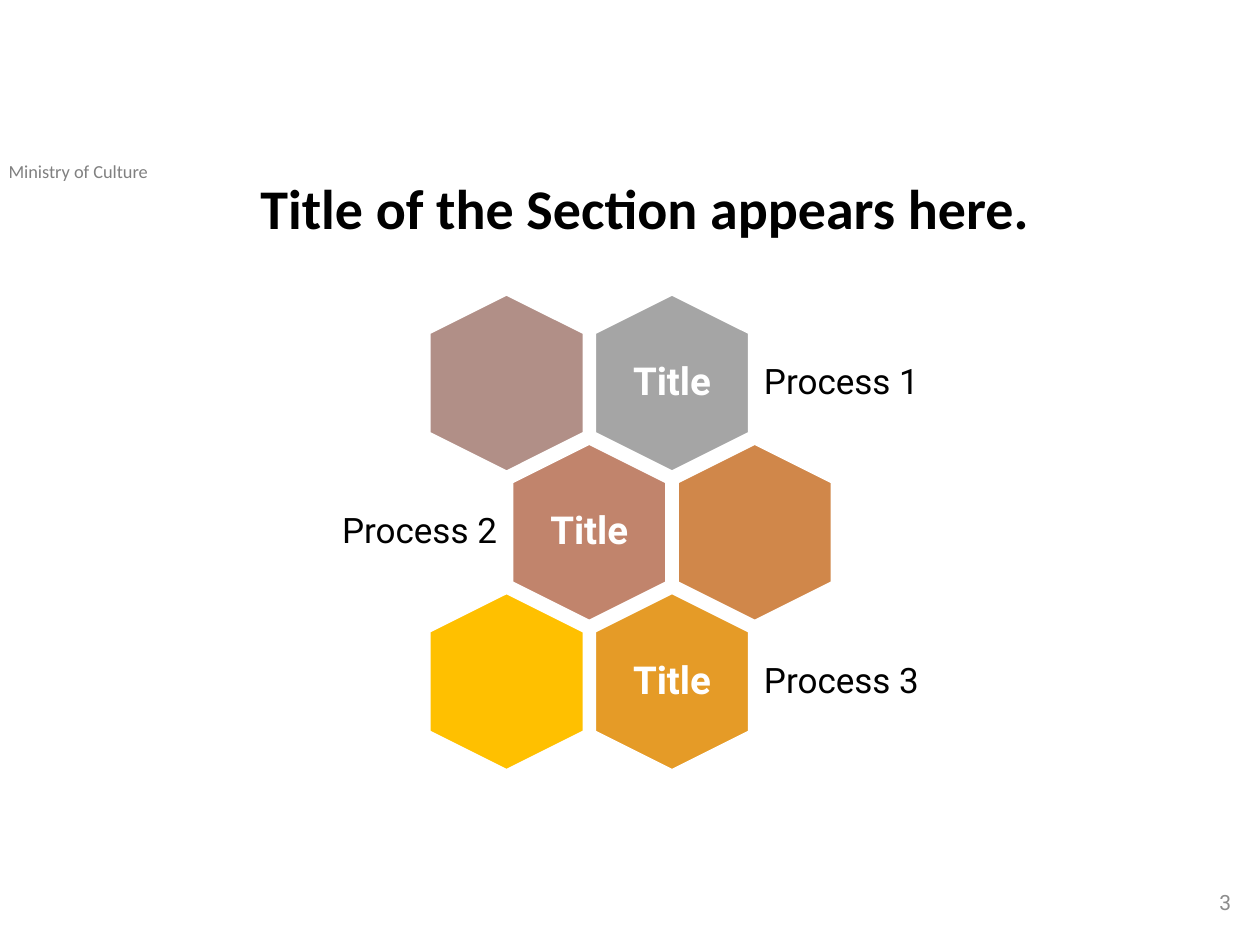
from dataclasses import dataclass

from pptx import Presentation
from pptx.dml.color import RGBColor
from pptx.enum.shapes import MSO_SHAPE
from pptx.enum.text import MSO_ANCHOR, PP_ALIGN
from pptx.util import Inches, Pt


@dataclass(frozen=True)
class Theme:
    heading: str = "Calibri"
    body: str = "Roboto"
    black: str = "000000"
    white: str = "FFFFFF"
    header_gray: str = "808080"
    number_gray: str = "8C8C8C"
    header_size: float = 10.5
    number_size: float = 12
    process_size: float = 20
    cell_size: float = 22
    title_size: float = 32


@dataclass(frozen=True)
class Box:
    left: float
    top: float
    width: float
    height: float

    def inches(self):
        return [Inches(v) for v in (self.left, self.top, self.width, self.height)]


THEME = Theme()
CELL_WIDTH, CELL_HEIGHT = 1.22, 1.4
LABEL_WIDTH, LABEL_HEIGHT, LABEL_GAP = 1.56, 0.84, 0.04
ROWS = [
    [("B18F87", "", ""), ("A5A5A5", "Title", "Process 1")],
    [("C1846C", "Title", "Process 2"), ("D0874A", "", "")],
    [("FFC000", "", ""), ("E59B27", "Title", "Process 3")],
]


def write(shape, text, font, size, color, align=PP_ALIGN.LEFT, bold=False,
          anchor=MSO_ANCHOR.MIDDLE, spacing=0.9, inset=None):
    frame = shape.text_frame
    frame.word_wrap = True
    frame.vertical_anchor = anchor
    if inset is not None:
        frame.margin_left = frame.margin_right = Inches(inset)
        frame.margin_top = frame.margin_bottom = Inches(inset)
    para = frame.paragraphs[0]
    para.text = text
    para.alignment = align
    para.line_spacing = spacing
    para.font.name = font
    para.font.size = Pt(size)
    para.font.bold = bold
    para.font.color.rgb = RGBColor.from_string(color)


def add_header(page, box):
    write(page.shapes.add_textbox(*box.inches()), "Ministry of Culture",
          THEME.heading, THEME.header_size, THEME.header_gray,
          anchor=MSO_ANCHOR.TOP, spacing=1.0)


def add_title(page, box):
    title = page.shapes.title
    title.left, title.top, title.width, title.height = box.inches()
    write(title, "Title of the Section appears here.", THEME.heading,
          THEME.title_size, THEME.black, PP_ALIGN.CENTER, True, MSO_ANCHOR.TOP)


def add_page_number(page, box):
    write(page.shapes.add_textbox(*box.inches()), "3", THEME.body,
          THEME.number_size, THEME.number_gray, PP_ALIGN.RIGHT, spacing=1.0)


def add_cell(page, box, color, caption):
    shift = (box.height - box.width) / 2
    turned = Box(box.left - shift, box.top + shift, box.height, box.width)
    hexagon = page.shapes.add_shape(MSO_SHAPE.HEXAGON, *turned.inches())
    hexagon.rotation = 90
    hexagon.adjustments[0] = 0.25
    hexagon.shadow.inherit = False
    hexagon.fill.solid()
    hexagon.fill.fore_color.rgb = RGBColor.from_string(color)
    hexagon.line.color.rgb = RGBColor.from_string(THEME.white)
    hexagon.line.width = Pt(1)
    if caption:
        inner = Box(box.left + 0.19, box.top + 0.22, box.width - 0.38, box.height - 0.44)
        write(page.shapes.add_textbox(*inner.inches()), caption, THEME.body,
              THEME.cell_size, THEME.white, PP_ALIGN.CENTER, True, inset=0.09)


def add_process_label(page, cell, text, on_left):
    left = cell.left - LABEL_GAP - LABEL_WIDTH if on_left else cell.left + cell.width + LABEL_GAP
    top = cell.top + (cell.height - LABEL_HEIGHT) / 2
    box = Box(left, top, LABEL_WIDTH, LABEL_HEIGHT)
    write(page.shapes.add_textbox(*box.inches()), text, THEME.body,
          THEME.process_size, THEME.black,
          PP_ALIGN.RIGHT if on_left else PP_ALIGN.LEFT, inset=0.08)


def add_honeycomb(page, box):
    column_step = (box.width - CELL_WIDTH) / 1.5
    row_step = (box.height - CELL_HEIGHT) / (len(ROWS) - 1)
    for row, cells in enumerate(ROWS):
        for column, (color, caption, label) in enumerate(cells):
            left = box.left + (column + row % 2 / 2) * column_step
            cell = Box(left, box.top + row * row_step, CELL_WIDTH, CELL_HEIGHT)
            add_cell(page, cell, color, caption)
            if label:
                add_process_label(page, cell, label, on_left=column == 0)


def main():
    deck = Presentation()
    deck.slide_width, deck.slide_height = Inches(10), Inches(7.5)
    page = deck.slides.add_slide(deck.slide_layouts[5])
    add_header(page, Box(-0.03, 1.22, 2.18, 0.28))
    add_honeycomb(page, Box(3.41, 2.34, 3.19, 3.77))
    add_page_number(page, Box(7.62, 6.96, 2.25, 0.4))
    add_title(page, Box(1.93, 1.39, 6.38, 0.79))
    deck.save("out.pptx")


if __name__ == "__main__":
    main()
